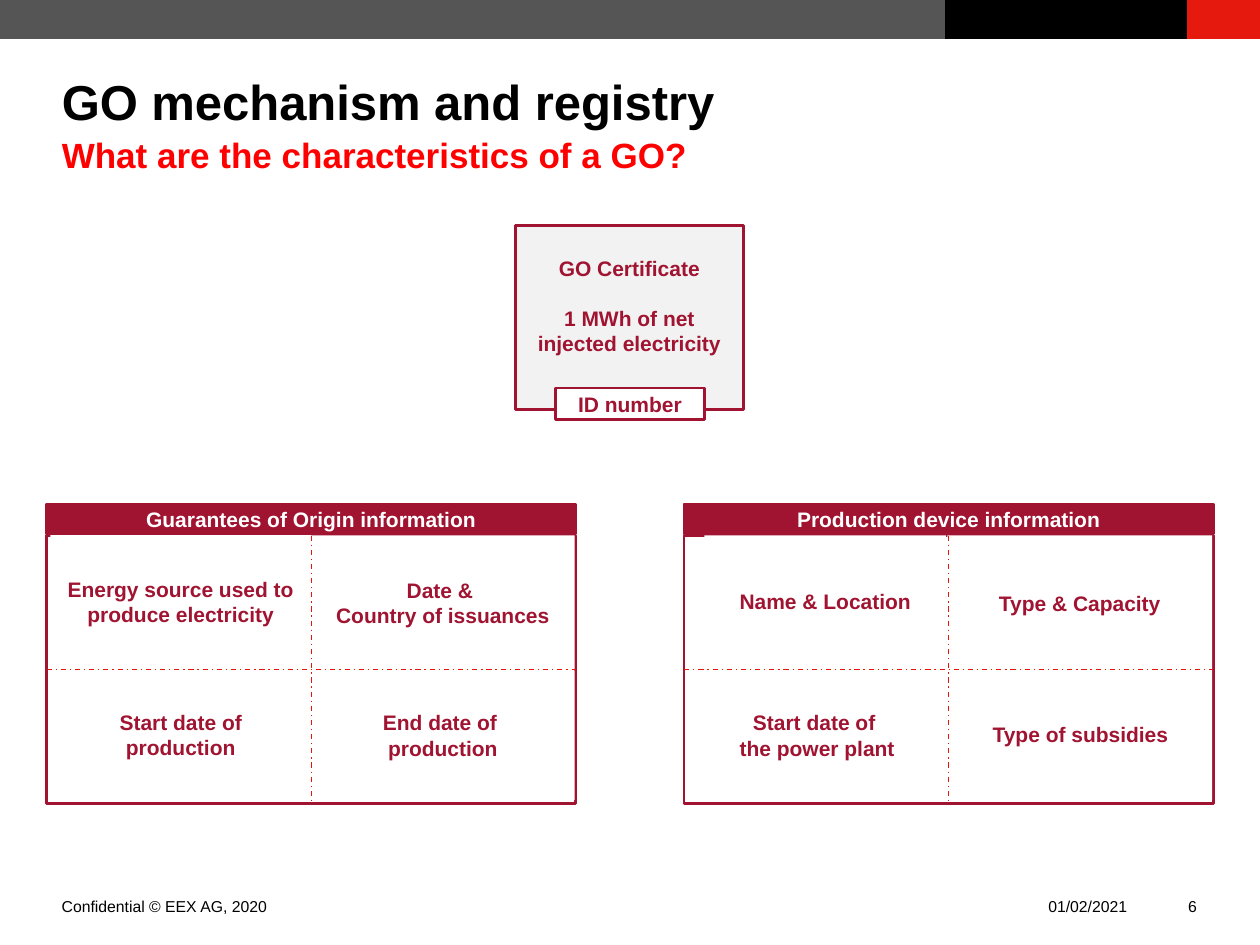
from dataclasses import dataclass

from lxml.etree import SubElement
from pptx import Presentation
from pptx.dml.color import RGBColor
from pptx.enum.dml import MSO_LINE
from pptx.enum.shapes import MSO_CONNECTOR, MSO_SHAPE
from pptx.enum.text import MSO_ANCHOR, MSO_AUTO_SIZE, PP_ALIGN
from pptx.oxml.ns import qn
from pptx.util import Inches, Pt


@dataclass(frozen=True)
class Theme:
    """Colours, type sizes, line widths and grid unit of the deck."""
    font: str = "Arial"
    black: str = "000000"
    white: str = "FFFFFF"
    gray: str = "555555"
    pale: str = "F2F2F2"
    crimson: str = "A01432"
    bar_red: str = "E6190F"
    title_red: str = "FF0000"
    divider_red: str = "E61409"
    title: int = 28
    subtitle: int = 20
    label: int = 12
    footer: int = 9
    outline: float = 1.5
    divider: float = 0.75
    unit: float = 0.1


THEME = Theme()
COLUMNS, ROWS = 100, 75
PANEL_WIDTH, PANEL_TOP, PANEL_HEIGHT = 42, 42.5, 21.3
HEADER_TOP, HEADER_HEIGHT = 40, 2.4

BARS = [
    ((94.2, 0, 5.8, 3.1), THEME.bar_red),
    ((0, 0, 75, 3.1), THEME.gray),
    ((75, 0, 19.2, 3.1), THEME.black),
]
FOOTERS = [
    ((83.2, 70.9, 7.1, 1.8), "01/02/2021", PP_ALIGN.LEFT),
    ((91.7, 70.9, 3.3, 1.8), "6", PP_ALIGN.RIGHT),
    ((4.9, 70.9, 31.7, 1.8), "Confidential © EEX AG, 2020", PP_ALIGN.LEFT),
]
PANELS = [
    (3.7, "Guarantees of Origin information", [
        ((0.3, 42.3, 20.7, 10.9), ["Energy source used to produce electricity"]),
        ((0.3, 53.1, 20.7, 10.4), ["Start date of production"]),
        ((21, 53.2, 20.9, 10.3), ["End date of ", "production"]),
        ((21, 42.5, 20.9, 10.6), ["Date & ", "Country of issuances"]),
    ]),
    (54.3, "Production device information", [
        ((1.6, 42.5, 19.2, 10.4), ["Name & Location"]),
        ((0.1, 53.2, 20.9, 10.3), ["Start date of ", "the power plant"]),
        ((21, 53.1, 20.9, 10.4), ["Type of subsidies"]),
        ((20.9, 42.5, 21, 10.7), ["Type & Capacity"]),
    ]),
]


def grid(*cells):
    """Turn grid columns and rows into slide lengths."""
    return [Inches(cell * THEME.unit) for cell in cells]


def style_font(font, size, color, bold=False):
    """Apply the deck's typeface with a size, colour and weight."""
    font.name = THEME.font
    font.size = Pt(size)
    font.bold = bold
    font.color.rgb = RGBColor.from_string(color)


def write_lines(frame, lines, size, color, bold=False, align=PP_ALIGN.CENTER):
    """Write each line as one paragraph of a text frame."""
    for index, line in enumerate(lines):
        para = frame.add_paragraph() if index else frame.paragraphs[0]
        para.text = line
        para.alignment = align
        style_font(para.font, size, color, bold)


def add_box(shapes, bounds, fill, outline=None, lines=(), color=THEME.crimson):
    """Add a flat rectangle with optional outline and centred bold text."""
    box = shapes.add_shape(MSO_SHAPE.RECTANGLE, *grid(*bounds))
    box.shadow.inherit = False
    box.fill.solid()
    box.fill.fore_color.rgb = RGBColor.from_string(fill)
    if outline:
        box.line.color.rgb = RGBColor.from_string(outline)
        box.line.width = Pt(THEME.outline)
    else:
        box.line.fill.background()
    box.text_frame.word_wrap = True
    box.text_frame.vertical_anchor = MSO_ANCHOR.MIDDLE
    write_lines(box.text_frame, lines, THEME.label, color, bold=True)
    return box


def clear_margins(frame):
    """Remove the insets of a text frame."""
    frame.margin_left = frame.margin_right = 0
    frame.margin_top = frame.margin_bottom = 0


def add_title(page, heading, question):
    """Fill the title placeholder with a heading and a smaller question."""
    title = page.shapes.title
    title.left, title.top, title.width, title.height = grid(4.9, 5.3, 90.1, 9.8)
    frame = title.text_frame
    clear_margins(frame)
    frame.word_wrap = True
    frame.auto_size = MSO_AUTO_SIZE.NONE
    frame.vertical_anchor = MSO_ANCHOR.TOP
    para = frame.paragraphs[0]
    para.alignment = PP_ALIGN.LEFT
    para.line_spacing = 1.08
    style_font(para.font, THEME.title, THEME.black, bold=True)
    style_font(para.add_run().font, THEME.title, THEME.black, bold=True)
    para.runs[0].text = heading
    para.add_line_break()
    span = para.add_run()
    span.text = question
    style_font(span.font, THEME.subtitle, THEME.title_red, bold=True)


def add_footer(page, bounds, text, align):
    """Add a small unwrapped text at the foot of the page."""
    box = page.shapes.add_textbox(*grid(*bounds))
    frame = box.text_frame
    clear_margins(frame)
    frame.word_wrap = False
    frame.vertical_anchor = MSO_ANCHOR.BOTTOM
    write_lines(frame, [text], THEME.footer, THEME.black, align=align)


def add_certificate(page):
    """Add the certificate with its identity tag."""
    shapes = page.shapes.add_group_shape().shapes
    card = add_box(shapes, (40.9, 17.9, 18.1, 14.6), THEME.pale, THEME.crimson,
                   ["GO Certificate", "1 MWh of net injected electricity"])
    card.text_frame.margin_bottom = Inches(0.24)
    card.text_frame.paragraphs[1].space_before = Pt(14)
    add_box(shapes, (44.1, 30.8, 11.8, 2.5), THEME.white, THEME.crimson, ["ID number"])


def add_panel(page, left, heading, cells):
    """Add a headed panel of four cells and return its frame."""
    shapes = page.shapes.add_group_shape().shapes
    frame = add_box(shapes, (left, PANEL_TOP, PANEL_WIDTH, PANEL_HEIGHT),
                    THEME.white, THEME.crimson)
    for (offset, *rest), lines in cells:
        add_box(shapes, (left + offset, *rest), THEME.white, lines=lines)
    add_box(shapes, (left, HEADER_TOP, PANEL_WIDTH, HEADER_HEIGHT),
            THEME.crimson, THEME.crimson, [heading], THEME.white)
    return frame


def add_divider(page, frame, start, end):
    """Join two opposite sides of a panel frame with a dash-dot line."""
    line = page.shapes.add_connector(MSO_CONNECTOR.STRAIGHT, 0, 0, 0, 0)
    line.begin_connect(frame, start)
    line.end_connect(frame, end)
    line.line.color.rgb = RGBColor.from_string(THEME.divider_red)
    line.line.width = Pt(THEME.divider)
    line.line.dash_style = MSO_LINE.DASH_DOT
    SubElement(line._element.spPr, qn("a:effectLst"))


def main():
    """Build the slide and save the deck."""
    deck = Presentation()
    deck.slide_width, deck.slide_height = grid(COLUMNS, ROWS)
    page = deck.slides.add_slide(deck.slide_layouts[5])
    for bounds, color in BARS:
        add_box(page.shapes, bounds, color)
    add_title(page, "GO mechanism and registry", "What are the characteristics of a GO?")
    for footer in FOOTERS:
        add_footer(page, *footer)
    add_certificate(page)
    frames = [add_panel(page, *panel) for panel in PANELS]
    for frame in frames:
        add_divider(page, frame, 0, 2)
        add_divider(page, frame, 1, 3)
    deck.save("out.pptx")


if __name__ == "__main__":
    main()
